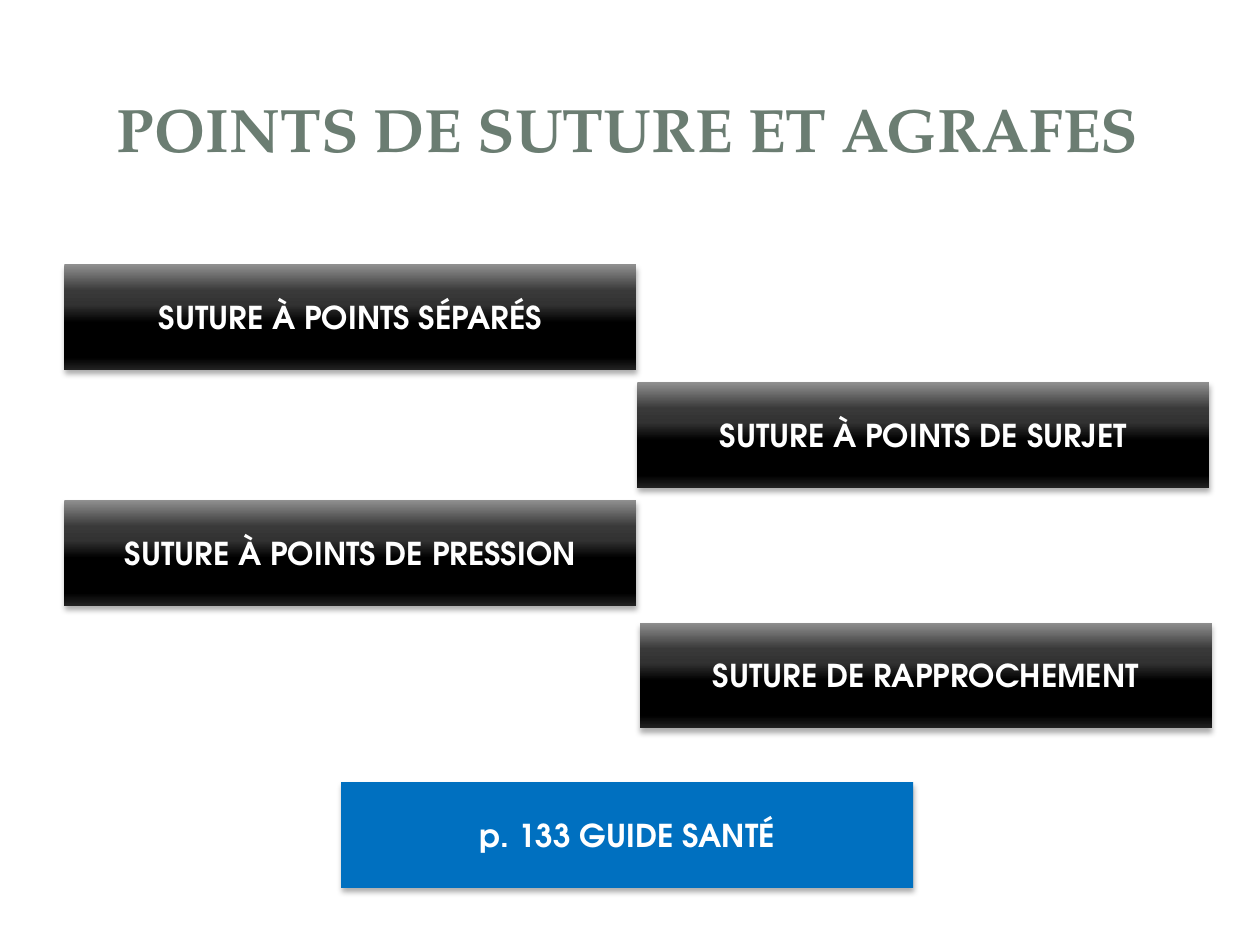
from dataclasses import dataclass

from lxml import etree
from pptx import Presentation
from pptx.dml.color import RGBColor
from pptx.enum.shapes import MSO_SHAPE
from pptx.enum.text import MSO_ANCHOR, PP_ALIGN
from pptx.oxml.ns import qn
from pptx.util import Cm, Pt

RECT = MSO_SHAPE.RECTANGLE
MIDDLE = MSO_ANCHOR.MIDDLE
CENTER = PP_ALIGN.CENTER

TITLE_FONT = "TeX Gyre Pagella"
BAR_FONT = "TeX Gyre Adventor"
WHITE, SAGE, BLUE = "FFFFFF", "6B7D72", "0070C0"
GLOSS = [(0, "909090"), (25, "393939"), (38, "323232"), (55, "000000"),
         (80, "000000"), (88, "000000"), (100, "222222")]

BAR_W, BAR_H = 11.53, 2.13
LEFT, RIGHT = 1.3, 12.85
TOP, PITCH = 5.33, 2.375


@dataclass
class Bar:
    text: str
    left: float
    top: float
    color: str | None = None  # None gives the glossy black gradient


BARS = [
    Bar("SUTURE À POINTS SÉPARÉS", LEFT, TOP),
    Bar("SUTURE À POINTS DE SURJET", RIGHT, TOP + PITCH),
    Bar("SUTURE À POINTS DE PRESSION", LEFT, TOP + 2 * PITCH),
    Bar("SUTURE DE RAPPROCHEMENT", 12.9, 12.55),
    Bar("p. 133 GUIDE SANTÉ", 6.88, 15.77, BLUE),
]


def rgb(color: str) -> RGBColor:
    return RGBColor.from_string(color)


def add_color(parent, color: str):
    return etree.SubElement(parent, qn("a:srgbClr"), val=color)


def write(sp, text: str, font: str, size: float, color: str) -> None:
    """Put one bold, centred line into a shape."""
    tf = sp.text_frame
    tf.word_wrap = True
    tf.vertical_anchor = MIDDLE
    p = tf.paragraphs[0]
    p.alignment = CENTER
    r = p.add_run()
    r.text = text
    r.font.name = font
    r.font.size = Pt(size)
    r.font.bold = True
    r.font.color.rgb = rgb(color)


def fill_gloss(sp) -> None:
    """Fill a shape with the vertical black gradient."""
    sp.fill.gradient()
    sp.fill.gradient_angle = 270
    stops = sp.element.spPr.find(qn("a:gradFill")).find(qn("a:gsLst"))
    for stop in list(stops):
        stops.remove(stop)
    for percent, color in GLOSS:
        add_color(etree.SubElement(stops, qn("a:gs"), pos=str(percent * 1000)), color)


def add_shadow(sp) -> None:
    """Give a shape a soft shadow falling straight down."""
    sp.shadow.inherit = False
    effects = sp.element.spPr.find(qn("a:effectLst"))
    shadow = etree.SubElement(effects, qn("a:outerShdw"), blurRad=str(Pt(3.5)),
                              dist=str(Pt(2.2)), dir="5400000", rotWithShape="0")
    etree.SubElement(add_color(shadow, "000000"), qn("a:alpha"), val="32000")


def add_bar(slide, bar: Bar) -> None:
    sp = slide.shapes.add_shape(RECT, Cm(bar.left), Cm(bar.top), Cm(BAR_W), Cm(BAR_H))
    if bar.color:
        sp.fill.solid()
        sp.fill.fore_color.rgb = rgb(bar.color)
    else:
        fill_gloss(sp)
    sp.line.fill.background()
    add_shadow(sp)
    write(sp, bar.text, BAR_FONT, 18, WHITE)


def main() -> None:
    prs = Presentation()
    prs.slide_width, prs.slide_height = Cm(25.4), Cm(19.05)
    slide = prs.slides.add_slide(prs.slide_layouts[6])
    title = slide.shapes.add_textbox(Cm(1.19), Cm(1.14), Cm(22.94), Cm(2.9))
    write(title, "POINTS DE SUTURE ET AGRAFES", TITLE_FONT, 35, SAGE)
    for bar in BARS:
        add_bar(slide, bar)
    prs.save("out.pptx")


if __name__ == "__main__":
    main()
